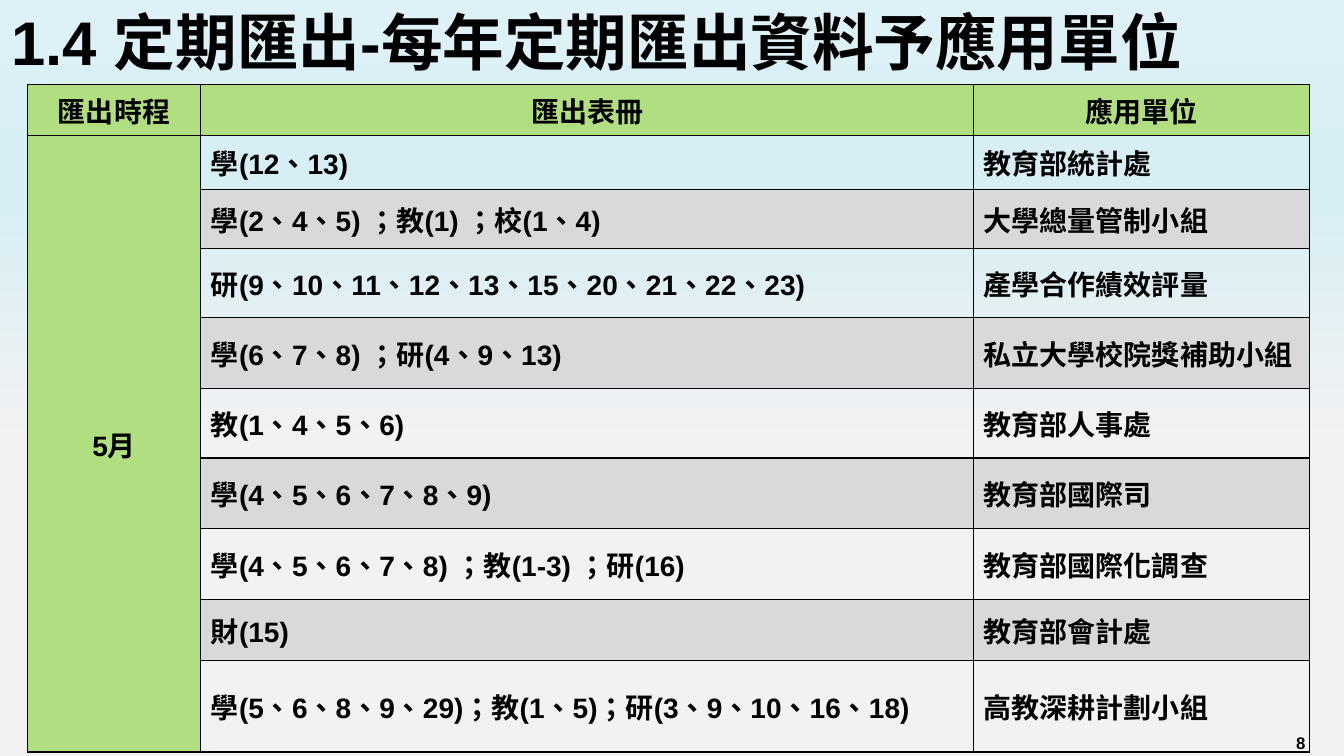
from lxml import etree
from pptx import Presentation
from pptx.dml.color import RGBColor
from pptx.enum.text import MSO_ANCHOR, MSO_AUTO_SIZE, PP_ALIGN
from pptx.oxml.ns import qn
from pptx.util import Pt

LEFT, CENTER = PP_ALIGN.LEFT, PP_ALIGN.CENTER
MIDDLE = MSO_ANCHOR.MIDDLE
NO_AUTOFIT = MSO_AUTO_SIZE.NONE
TITLE_ONLY = 5

BLACK = RGBColor(0x00, 0x00, 0x00)
GREEN = RGBColor(0xB2, 0xDE, 0x82)
GRAY = RGBColor(0xD9, 0xD9, 0xD9)
BACKGROUND_STOPS = [
    (41, RGBColor(0xF2, 0xF2, 0xF2)),
    (74, RGBColor(0xD7, 0xEE, 0xF5)),
    (83, RGBColor(0xDA, 0xEF, 0xF6)),
    (100, RGBColor(0xDD, 0xF1, 0xF7)),
]

FONT = "Arial"
TITLE = "1.4 定期匯出-每年定期匯出資料予應用單位"
HEADERS = ["匯出時程", "匯出表冊", "應用單位"]
MONTH = "5月"
EXPORTS = [
    ("學(12、13)", "教育部統計處"),
    ("學(2、4、5) ；教(1) ；校(1、4)", "大學總量管制小組"),
    ("研(9、10、11、12、13、15、20、21、22、23)", "產學合作績效評量"),
    ("學(6、7、8) ；研(4、9、13)", "私立大學校院獎補助小組"),
    ("教(1、4、5、6)", "教育部人事處"),
    ("學(4、5、6、7、8、9)", "教育部國際司"),
    ("學(4、5、6、7、8) ；教(1-3) ；研(16)", "教育部國際化調查"),
    ("財(15)", "教育部會計處"),
    ("學(5、6、8、9、29)；教(1、5)；研(3、9、10、16、18)", "高教深耕計劃小組"),
]
COLUMN_WIDTHS = [124, 552, 240]
# Header and last row are tall enough for one and two lines of text
ROW_HEIGHTS = [36.5, 38.5, 42, 49.5, 50.5, 50, 50.5, 50.5, 43.5, 65.5]


def set_background(slide):
    fill = slide.background.fill
    fill.gradient()
    fill.gradient_angle = 90
    stops = slide.element.find(".//" + qn("a:gsLst"))
    for stop in list(stops):
        stops.remove(stop)
    for percent, color in BACKGROUND_STOPS:
        stop = etree.SubElement(stops, qn("a:gs"), pos=str(percent * 1000))
        etree.SubElement(stop, qn("a:srgbClr"), val=str(color))


def write_text(tf, text, size, align=LEFT):
    p = tf.paragraphs[0]
    p.alignment = align
    r = p.add_run()
    r.text = text
    r.font.name = FONT
    r.font.size = Pt(size)
    r.font.bold = True
    r.font.color.rgb = BLACK
    r._r.get_or_add_rPr().set("lang", "zh-TW")
    return p


def add_title(slide):
    sp = slide.shapes.title
    sp.left, sp.top, sp.width, sp.height = Pt(0.7), Pt(8.6), Pt(959), Pt(48)
    tf = sp.text_frame
    tf.word_wrap = True
    tf.auto_size = NO_AUTOFIT
    tf.vertical_anchor = MIDDLE
    write_text(tf, TITLE, 44).line_spacing = 0.9


def add_page_number(slide, number):
    sp = slide.shapes.add_textbox(Pt(898.6), Pt(520), Pt(61), Pt(20))
    sp.text_frame.word_wrap = True
    write_text(sp.text_frame, number, 12, CENTER)


def set_borders(cell):
    tcPr = cell._tc.get_or_add_tcPr()
    for side in ("lnL", "lnR", "lnT", "lnB"):
        line = etree.SubElement(tcPr, qn("a:" + side), w=str(Pt(1)))
        solid = etree.SubElement(line, qn("a:solidFill"))
        etree.SubElement(solid, qn("a:srgbClr"), val=str(BLACK))


def fill_cell(cell, text, color=None, align=LEFT):
    cell.vertical_anchor = MIDDLE
    if color is None:
        cell.fill.background()
    else:
        cell.fill.solid()
        cell.fill.fore_color.rgb = color
    write_text(cell.text_frame, text, 20, align)


def add_export_table(slide):
    frame = slide.shapes.add_table(
        len(ROW_HEIGHTS), len(COLUMN_WIDTHS), Pt(19.5), Pt(60.3),
        Pt(sum(COLUMN_WIDTHS)), Pt(sum(ROW_HEIGHTS)))
    table = frame.table
    table.first_row = False
    table.horz_banding = False
    for column, width in zip(table.columns, COLUMN_WIDTHS):
        column.width = Pt(width)
    for row, height in zip(table.rows, ROW_HEIGHTS):
        row.height = Pt(height)
    for cell in table.iter_cells():
        set_borders(cell)

    # Header row and month column
    for col, header in enumerate(HEADERS):
        fill_cell(table.cell(0, col), header, GREEN, CENTER)
    month = table.cell(1, 0)
    month.merge(table.cell(len(EXPORTS), 0))
    fill_cell(month, MONTH, GREEN, CENTER)

    # Every second export row is gray
    for row, export in enumerate(EXPORTS, start=1):
        color = GRAY if row % 2 == 0 else None
        for col, text in enumerate(export, start=1):
            fill_cell(table.cell(row, col), text, color)


def main():
    prs = Presentation()
    prs.slide_width, prs.slide_height = Pt(960), Pt(540)
    slide = prs.slides.add_slide(prs.slide_layouts[TITLE_ONLY])
    set_background(slide)
    add_page_number(slide, "8")
    add_title(slide)
    add_export_table(slide)
    prs.save("out.pptx")


if __name__ == "__main__":
    main()
